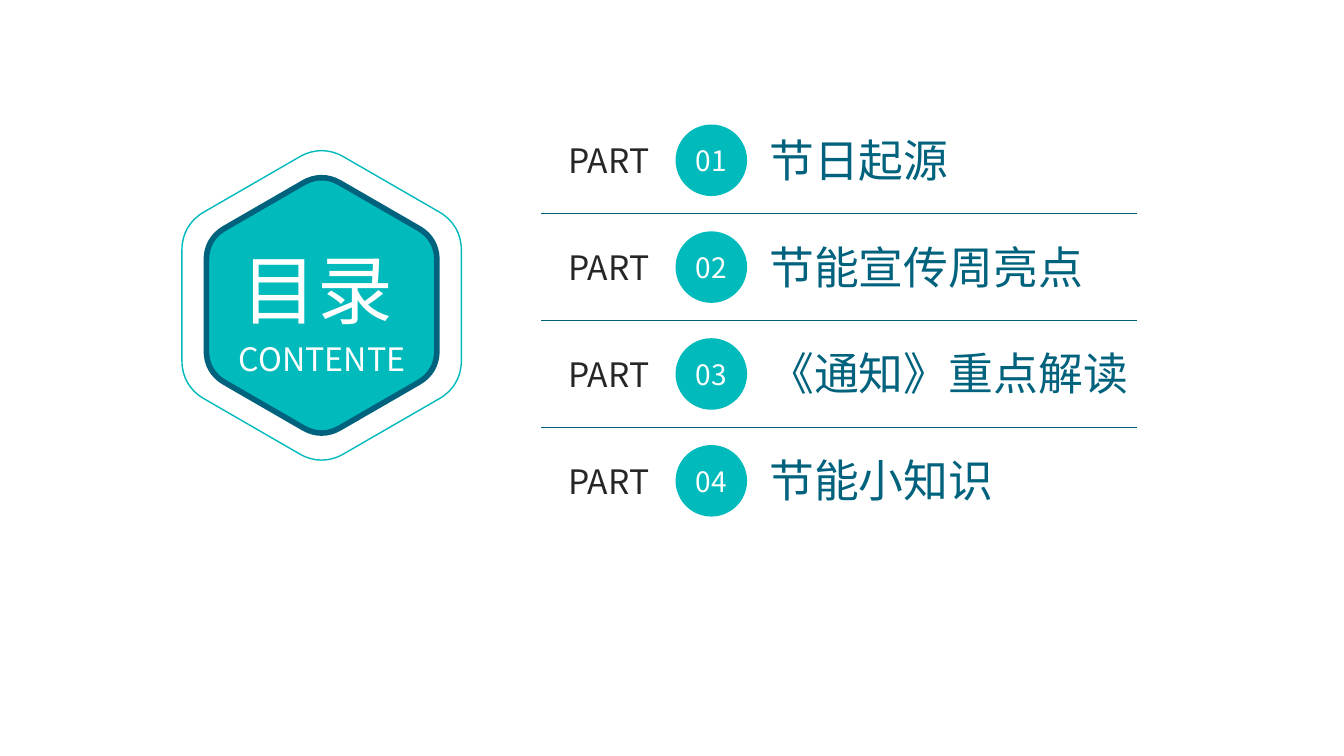
import math

import pptx
import pptx.dml.color
import pptx.enum.shapes
import pptx.enum.text
import pptx.oxml
import pptx.oxml.ns
import pptx.util
from pptx.util import Inches

FONT = "Noto Sans CJK SC"
COLORS = {"teal": "01BABC", "navy": "00627D", "ink": "262626", "white": "FFFFFF"}
ALIGN = pptx.enum.text.PP_ALIGN
PARTS = ["节日起源", "节能宣传周亮点", "《通知》重点解读", "节能小知识"]
FIRST_ROW, PITCH = 1.59, 1.06
HEX_X, HEX_Y = 3.19, 3.03


def rgb(name):
    return pptx.dml.color.RGBColor.from_string(COLORS[name])


def new_element(tag, **attrs):
    el = pptx.oxml.parse_xml(f"<{tag} {pptx.oxml.ns.nsdecls('a')}/>")
    for key, value in attrs.items():
        el.set(key, value)
    return el


def place(sp, left, top, width, height):
    sp.left, sp.top, sp.width, sp.height = map(Inches, (left, top, width, height))


def write(sp, *lines, size, color, align=ALIGN.LEFT, anchor="MIDDLE", inset=0, gap=0):
    """Fill a shape with one unbulleted paragraph per line, gap points apart."""
    tf = sp.text_frame
    tf.word_wrap = True
    tf.auto_size = pptx.enum.text.MSO_AUTO_SIZE.NONE
    tf.vertical_anchor = pptx.enum.text.MSO_ANCHOR[anchor]
    tf.margin_left = tf.margin_right = tf.margin_top = tf.margin_bottom = Inches(inset)
    for i, line in enumerate(lines):
        p = tf.add_paragraph() if i else tf.paragraphs[0]
        p.alignment = align
        p.line_spacing = 1.0
        p.space_before = pptx.util.Pt(gap if i else 0)
        p.space_after = pptx.util.Pt(0)
        pPr = p._p.get_or_add_pPr()
        pPr.set("marL", "0")
        pPr.set("indent", "0")
        pPr.append(new_element("a:buNone"))
        r = p.add_run()
        r.text = line
        r.font.size = pptx.util.Pt(size)
        r.font.color.rgb = rgb(color)
        r.font.name = FONT
        r._r.get_or_add_rPr().append(new_element("a:ea", typeface=FONT))


def text_box(s, text, left, top, width, height, **fmt):
    write(s.shapes.add_textbox(*map(Inches, (left, top, width, height))), text, **fmt)


def rounded_hexagon(s, radius, line, line_width, fill=None):
    """Draw a pointed-top hexagon whose corners are cubic curves."""
    corners = [(HEX_X + radius * math.sin(k * math.pi / 3),
                HEX_Y - radius * math.cos(k * math.pi / 3)) for k in range(6)]
    points = []
    for k, corner in enumerate(corners):
        before, after = corners[k - 1], corners[(k + 1) % 6]
        for end, share in ((before, 0.156), (before, 0.056), (after, 0.056), (after, 0.156)):
            points.append([Inches(u + (v - u) * share) for u, v in zip(corner, end)])
    builder = s.shapes.build_freeform(*points[0])
    builder.add_line_segments(points[1:], close=True)
    sp = builder.convert_to_shape()

    # Of every four segments, the first three points make a corner's curve.
    segments = sp._element.findall(".//" + pptx.oxml.ns.qn("a:lnTo"))
    for k in range(0, len(segments), 4):
        curve = new_element("a:cubicBezTo")
        segments[k].addprevious(curve)
        for segment in segments[k:k + 3]:
            curve.append(segment[0])
            segment.getparent().remove(segment)

    sp.shadow.inherit = False
    sp.line.color.rgb = rgb(line)
    sp.line.width = pptx.util.Pt(line_width)
    if fill:
        sp.fill.solid()
        sp.fill.fore_color.rgb = rgb(fill)
    else:
        sp.fill.background()


def number_circle(s, text, center_y, size=0.71):
    sp = s.shapes.add_shape(pptx.enum.shapes.MSO_SHAPE.OVAL, Inches(6.7),
                            Inches(center_y - size / 2), Inches(size), Inches(size))
    sp.shadow.inherit = False
    sp.fill.solid()
    sp.fill.fore_color.rgb = rgb("teal")
    sp.line.fill.background()
    write(sp, text, size=20, color="white", align=ALIGN.CENTER)


def divider(s, y):
    cx = s.shapes.add_connector(pptx.enum.shapes.MSO_CONNECTOR.STRAIGHT,
                                Inches(5.37), Inches(y), Inches(11.28), Inches(y))
    cx.line.color.rgb = rgb("navy")
    cx.line.width = pptx.util.Pt(0.5)
    cx._element.spPr.append(new_element("a:effectLst"))


def main():
    prs = pptx.Presentation()
    prs.slide_width, prs.slide_height = Inches(13.33), Inches(7.5)
    s = prs.slides.add_slide(prs.slide_layouts[1])
    title, body = s.shapes.title, s.placeholders[1]

    rounded_hexagon(s, 1.6, "teal", 1)
    rounded_hexagon(s, 1.32, "navy", 4, fill="teal")
    s.shapes.element.append(title.element)  # bring the title in front of the hexagons
    place(title, 2.3, 2.36, 1.79, 1.01)
    write(title, "目录", size=54, color="white", inset=0.1)
    text_box(s, "CONTENTE", 2.2, 3.31, 1.99, 0.49, size=23, color="white", align=ALIGN.CENTER)

    place(body, 7.63, 1.32, 5.12, 3.72)
    write(body, *PARTS, size=32, color="navy", anchor="TOP", gap=37.7)
    for i in range(len(PARTS)):
        y = FIRST_ROW + i * PITCH
        text_box(s, "PART", 5.37, y - 0.2, 1.34, 0.4, size=24, color="ink", align=ALIGN.CENTER)
        number_circle(s, f"{i + 1:02}", y)
        if i:
            divider(s, y - PITCH / 2)

    prs.save("out.pptx")


if __name__ == "__main__":
    main()
